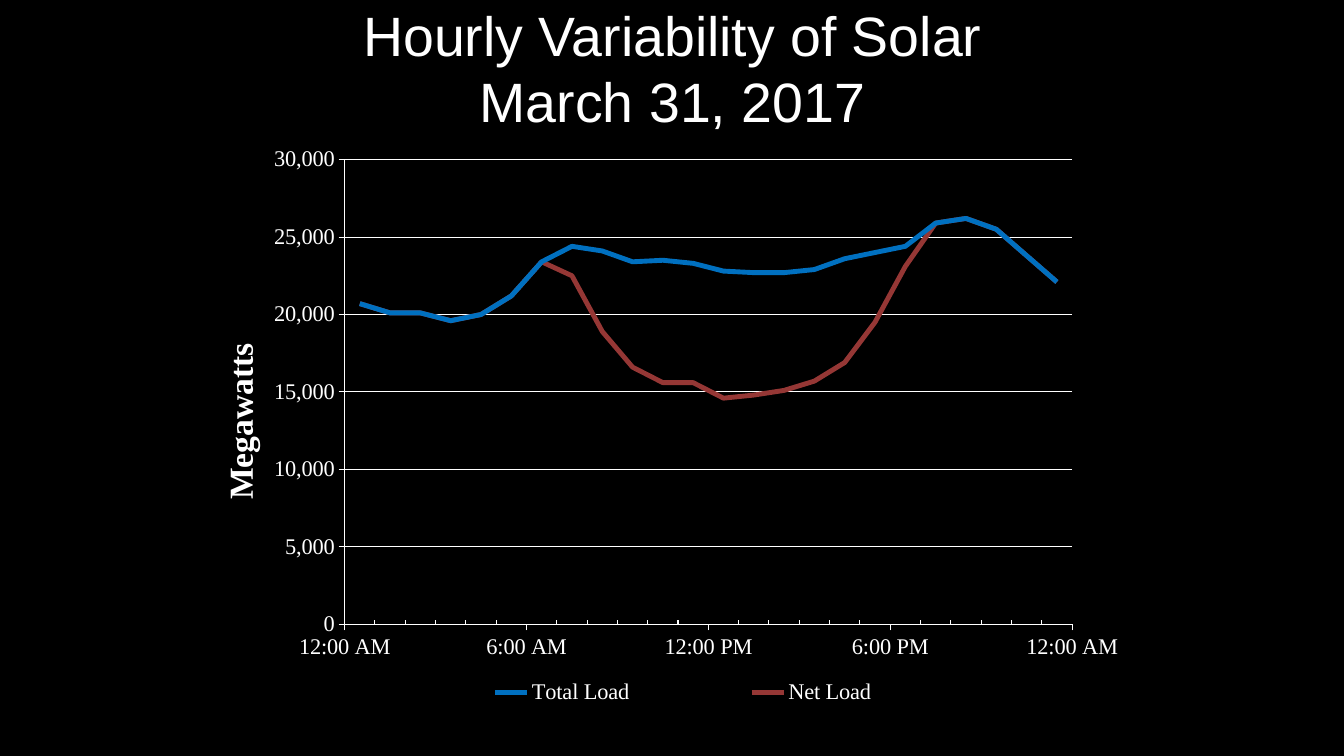
from lxml import etree
from pptx import Presentation
from pptx import util as u
from pptx.chart.data import XyChartData
from pptx.dml.color import RGBColor
from pptx.enum import chart as ch, text
from pptx.oxml.ns import qn

COLORS = {"background": "000000", "text": "FFFFFF", "Total Load": "0070C0", "Net Load": "953735"}
TITLE_LINES = ["Hourly Variability of Solar", "March 31, 2017"]
HOURLY_LOADS = {
    "Total Load": [20700, 20100, 20100, 19600, 20000, 21200, 23400, 24400,
                   24100, 23400, 23500, 23300, 22800, 22700, 22700, 22900,
                   23600, 24000, 24400, 25900, 26200, 25500, 23800, 22100],
    "Net Load": [20700, 20100, 20100, 19600, 20000, 21200, 23400, 22500,
                 18900, 16600, 15600, 15600, 14600, 14800, 15100, 15700,
                 16900, 19500, 23100, 25900, 26200, 25500, 23800, 22100],
}


def color(name):
    return RGBColor.from_string(COLORS[name])


def set_layout(part, **settings):
    """Give a chart part a manual layout in fractions of the chart area."""
    layout = part.find(qn("c:layout"))
    if layout is None:
        layout = etree.Element(qn("c:layout"))
        part.insert(0, layout)
    manual = etree.SubElement(layout, qn("c:manualLayout"))
    for tag, value in settings.items():
        etree.SubElement(manual, qn(f"c:{tag}")).set("val", str(value))


prs = Presentation()
prs.slide_width, prs.slide_height = u.Inches(13.33), u.Inches(7.5)
slide = prs.slides.add_slide(prs.slide_layouts[5])
slide.background.fill.solid()
slide.background.fill.fore_color.rgb = color("background")

# Title
title = slide.shapes.title
title.left, title.top = u.Inches(2.17), u.Inches(0.17)
title.width, title.height = u.Inches(9), u.Inches(1)
title.text_frame.auto_size = text.MSO_AUTO_SIZE.NONE
title.text_frame.vertical_anchor = text.MSO_ANCHOR.MIDDLE
heading = title.text_frame.paragraphs[0]
heading.alignment = text.PP_ALIGN.CENTER
for number, line in enumerate(TITLE_LINES):
    if number:
        heading.add_line_break()
    run = heading.add_run()
    run.text = line
    run.font.size = u.Pt(39.6)
    run.font.name = "Arial"
    run.font.color.rgb = color("text")

# Chart: each hourly value sits at the middle of its hour, as a fraction of a day
load_data = XyChartData()
for name, megawatts in HOURLY_LOADS.items():
    series = load_data.add_series(name)
    for hour, value in enumerate(megawatts):
        series.add_data_point((hour + 0.5) / 24, value)
chart = slide.shapes.add_chart(
    ch.XL_CHART_TYPE.XY_SCATTER_LINES_NO_MARKERS,
    u.Inches(1.92), u.Inches(1.42), u.Inches(9.25), u.Inches(5.83), load_data).chart
chart.has_title = False
chart.font.size = u.Pt(16)
chart.font.name = "Times New Roman"
chart.font.color.rgb = color("text")
for series in chart.plots[0].series:
    series.smooth = False
    series.marker.style = ch.XL_MARKER_STYLE.NONE
    series.format.line.width = u.Pt(3.5)
    series.format.line.color.rgb = color(series.name)

# Axes
time_axis, load_axis = chart.category_axis, chart.value_axis
for axis, maximum, major, number_format in (
        (time_axis, 1, 0.25, "h:mm AM/PM"), (load_axis, 30000, 5000, "#,##0")):
    axis.minimum_scale, axis.maximum_scale = 0, maximum
    axis.major_unit = major
    axis.major_tick_mark = ch.XL_TICK_MARK.OUTSIDE
    axis.minor_tick_mark = ch.XL_TICK_MARK.NONE
    axis.tick_labels.number_format = number_format
    axis.tick_labels.number_format_is_linked = False
    axis.format.line.color.rgb = color("text")
    axis.format.line.width = u.Pt(0.75)
time_axis.has_major_gridlines = False
time_axis.minor_unit = 1 / 24
time_axis.minor_tick_mark = ch.XL_TICK_MARK.INSIDE
load_axis.has_major_gridlines = True
load_axis.major_gridlines.format.line.color.rgb = color("text")
load_axis.major_gridlines.format.line.width = u.Pt(0.75)

unit_frame = load_axis.axis_title.text_frame
unit = unit_frame.paragraphs[0].add_run()
unit.text = "Megawatts"
unit.font.size = u.Pt(24)
unit.font.bold = True
unit.font.name = "Times New Roman"
unit.font.color.rgb = color("text")
load_title = load_axis.axis_title._element
body = load_title.find(".//" + qn("a:bodyPr"))
body.set("rot", "-5400000")
body.set("vert", "horz")

chart.has_legend = True
chart.legend.position = ch.XL_LEGEND_POSITION.BOTTOM
chart.legend.include_in_layout = False

# Placement inside the chart area
set_layout(load_title, xMode="edge", yMode="edge", x=0.02, y=0.33)
set_layout(chart.legend._element, xMode="edge", yMode="edge", x=0.2, y=0.9, w=0.65, h=0.07)
set_layout(chart._chartSpace.chart.plotArea, layoutTarget="inner",
           xMode="edge", yMode="edge", x=0.162, y=0.028, w=0.78, h=0.791)

prs.save("out.pptx")
